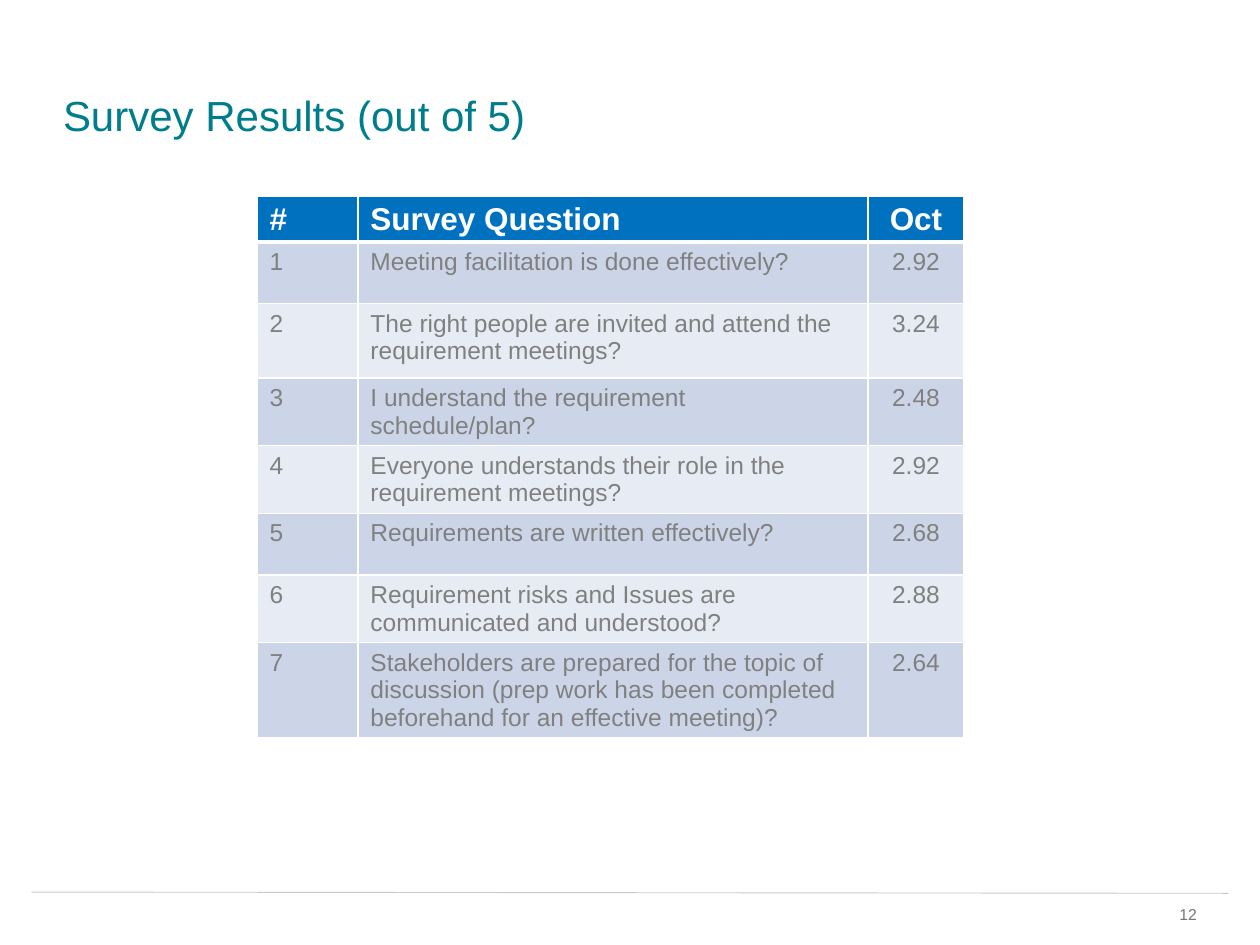
from lxml import etree
from pptx import Presentation
from pptx.dml.color import RGBColor
from pptx.enum.shapes import MSO_CONNECTOR
from pptx.enum.text import MSO_ANCHOR, PP_ALIGN
from pptx.oxml.ns import qn
from pptx.util import Inches, Pt

LEFT, CENTER, RIGHT = PP_ALIGN.LEFT, PP_ALIGN.CENTER, PP_ALIGN.RIGHT
TOP, BOTTOM = MSO_ANCHOR.TOP, MSO_ANCHOR.BOTTOM
STRAIGHT = MSO_CONNECTOR.STRAIGHT
TITLE_ONLY = 5

COLUMN_WIDTHS = [0.8, 4.05, 0.76]
ROW_HEIGHTS = [0.34, 0.49, 0.59, 0.49, 0.49, 0.49, 0.49, 0.69]
COLUMN_ALIGNS = [LEFT, LEFT, CENTER]
HEADER = ["#", "Survey Question", "Oct"]
RESULTS = [
    ("Meeting facilitation is done effectively?", "2.92"),
    ("The right people are invited and attend the requirement meetings?", "3.24"),
    ("I understand the requirement schedule/plan?", "2.48"),
    ("Everyone understands their role in the requirement meetings?", "2.92"),
    ("Requirements are written effectively?", "2.68"),
    ("Requirement risks and Issues are communicated and understood?", "2.88"),
    ("Stakeholders are prepared for the topic of discussion (prep work has "
     "been completed beforehand for an effective meeting)?", "2.64"),
]


def rgb(value):
    return RGBColor.from_string(value)


class SurveySlide:
    font = "Arial"
    teal, footer_gray, rule_gray = "007D8A", "747678", "C9CAC8"
    white, header_blue, body_gray = "FFFFFF", "0071BF", "808080"
    bands = ["CCD5E8", "E7EBF4"]

    def __init__(self, prs):
        self.s = prs.slides.add_slide(prs.slide_layouts[TITLE_ONLY])

    def add_text(self, tf, text, size, color, align=LEFT, bold=False):
        p = tf.paragraphs[0]
        p.alignment = align
        r = p.add_run()
        r.text = text
        r.font.name, r.font.size, r.font.bold = self.font, Pt(size), bold
        r.font.color.rgb = rgb(color)
        return p

    def frame(self, tf, left, right, bottom, anchor):
        tf.word_wrap = True
        tf.vertical_anchor = anchor
        tf.margin_left, tf.margin_right = Inches(left), Inches(right)
        tf.margin_top, tf.margin_bottom = Inches(0.05), Inches(bottom)

    def title(self, text, x, y, w, h):
        sp = self.s.shapes.title
        sp.left, sp.top, sp.width, sp.height = map(Inches, (x, y, w, h))
        self.frame(sp.text_frame, 0, 0.1, 0, BOTTOM)
        p = self.add_text(sp.text_frame, text, 24, self.teal)
        p.line_spacing = Pt(26.8)

    def page_number(self, text, x, y, w, h):
        sp = self.s.shapes.add_textbox(*map(Inches, (x, y, w, h)))
        self.frame(sp.text_frame, 0.1, 0, 0.05, TOP)
        self.add_text(sp.text_frame, text, 9, self.footer_gray, RIGHT)

    def rule(self, x1, y1, x2, y2):
        line = self.s.shapes.add_connector(STRAIGHT, *map(Inches, (x1, y1, x2, y2)))
        line.line.color.rgb = rgb(self.rule_gray)
        line.line.width = Pt(0.5)
        etree.SubElement(line._element.spPr, qn("a:effectLst"))

    def borders(self, cell, widths):
        # Borders must come before the fill in the cell properties
        tcPr = cell._tc.get_or_add_tcPr()
        for i, (side, width) in enumerate(widths.items()):
            ln = etree.Element(qn(f"a:ln{side}"), w=str(Pt(width)))
            fill = etree.SubElement(ln, qn("a:solidFill"))
            etree.SubElement(fill, qn("a:srgbClr"), val=self.white)
            tcPr.insert(i, ln)

    def table(self, rows, x, y):
        size = (sum(COLUMN_WIDTHS), sum(ROW_HEIGHTS))
        table = self.s.shapes.add_table(
            len(rows), len(COLUMN_WIDTHS), *map(Inches, (x, y, *size))).table
        for column, width in zip(table.columns, COLUMN_WIDTHS):
            column.width = Inches(width)
        for i, (row, height) in enumerate(zip(rows, ROW_HEIGHTS)):
            table.rows[i].height = Inches(height)
            header = i == 0
            for j, text in enumerate(row):
                cell = table.cell(i, j)
                cell.fill.solid()
                cell.fill.fore_color.rgb = rgb(
                    self.header_blue if header else self.bands[(i - 1) % 2])
                if header:
                    cell.margin_top = cell.margin_bottom = Inches(0.04)
                self.borders(cell, {"L": 1, "R": 1, "T": 3 if i == 1 else 1,
                                    "B": 3 if header else 1})
                self.add_text(cell.text_frame, text, 18 if header else 14,
                              self.white if header else self.body_gray,
                              COLUMN_ALIGNS[j], header)


def main():
    prs = Presentation()
    prs.slide_width, prs.slide_height = Inches(10), Inches(7.5)
    slide = SurveySlide(prs)

    # Title
    slide.title("Survey Results (out of 5)", 0.5, 0.5, 9.17, 0.61)

    # Survey scores
    rows = [HEADER] + [(str(n), question, score)
                       for n, (question, score) in enumerate(RESULTS, 1)]
    slide.table(rows, 2.04, 1.56)

    # Footer
    slide.rule(0.25, 7.08, 9.75, 7.09)
    slide.page_number("12", 8.83, 7.13, 0.67, 0.2)

    prs.save("out.pptx")


if __name__ == "__main__":
    main()
